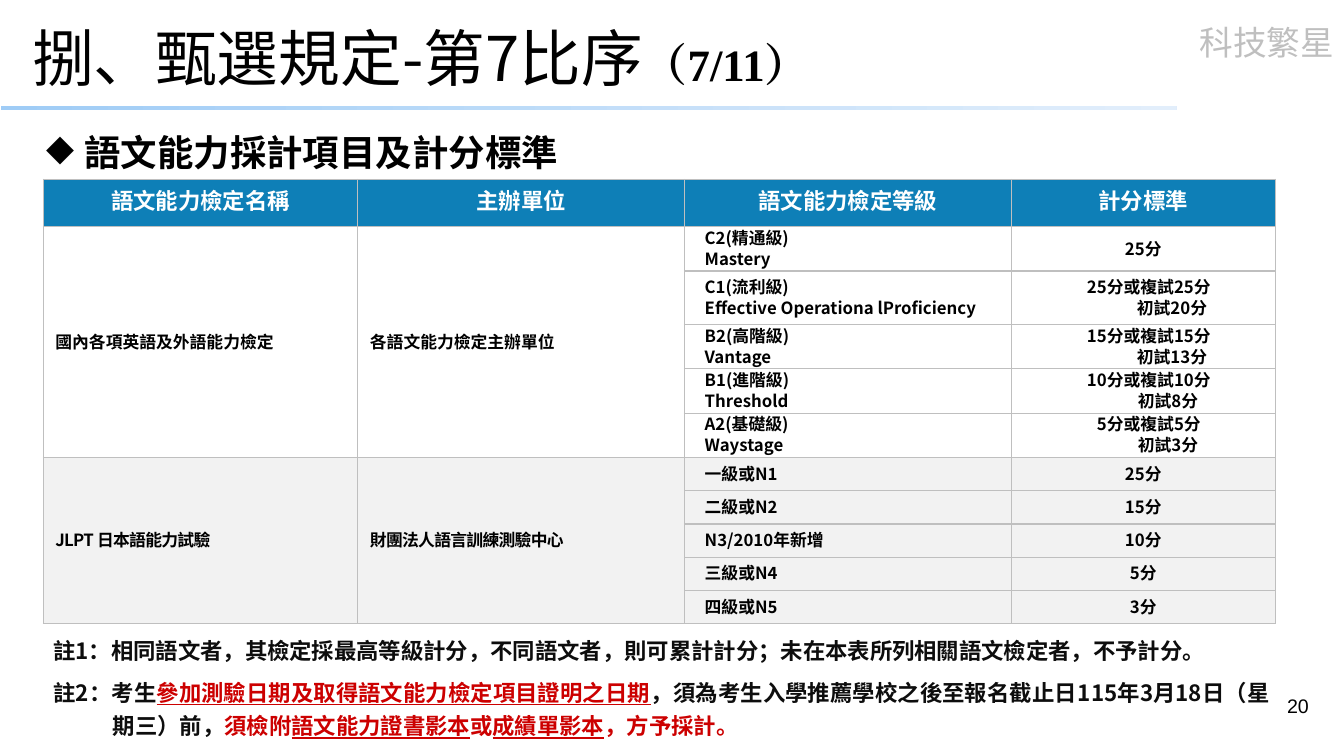
from lxml import etree
from pptx import Presentation
from pptx.dml.color import RGBColor
from pptx.enum.shapes import MSO_SHAPE
from pptx.enum.text import MSO_ANCHOR, PP_ALIGN
from pptx.oxml.ns import qn
from pptx.util import Inches, Pt

LEFT, CENTER, RIGHT, JUSTIFY = PP_ALIGN.LEFT, PP_ALIGN.CENTER, PP_ALIGN.RIGHT, PP_ALIGN.JUSTIFY
TOP, MIDDLE = MSO_ANCHOR.TOP, MSO_ANCHOR.MIDDLE
RECTANGLE = MSO_SHAPE.RECTANGLE

BLACK = RGBColor(0x00, 0x00, 0x00)
WHITE = RGBColor(0xFF, 0xFF, 0xFF)
INK = RGBColor(0x0D, 0x0D, 0x0D)
RED = RGBColor(0xCC, 0x00, 0x00)
GRAY = RGBColor(0xBF, 0xBF, 0xBF)
PALE_GRAY = RGBColor(0xF2, 0xF2, 0xF2)
HEADER_BLUE = RGBColor(0x0E, 0x7F, 0xB7)
BAR_START = RGBColor(0x9F, 0xCC, 0xF6)
BAR_END = RGBColor(0xE2, 0xEE, 0xFB)
SANS, SANS_JP = "Noto Sans CJK SC", "Noto Sans CJK JP"
SERIF, ARIAL = "Times New Roman", "Arial"

HEADERS = ["語文能力檢定名稱", "主辦單位", "語文能力檢定等級", "計分標準"]
# Each level: lines of the level cell, lines of the score cell, extra indent of the second score line
EXAMS = [
    {"name": "國內各項英語及外語能力檢定", "host": "各語文能力檢定主辦單位",
     "fill": WHITE, "spacing": 0,
     "levels": [
         (["C2(精通級)", "Mastery"], ["25分"], 0),
         (["C1(流利級)", "Effective Operationa lProficiency"], ["25分或複試25分", "初試20分"], 0.46),
         (["B2(高階級)", "Vantage"], ["15分或複試15分", "初試13分"], 0.46),
         (["B1(進階級)", "Threshold"], ["10分或複試10分", "初試8分"], 0.38),
         (["A2(基礎級)", "Waystage"], ["5分或複試5分", "初試3分"], 0.38),
     ]},
    {"name": "JLPT 日本語能力試驗", "host": "財團法人語言訓練測驗中心",
     "fill": PALE_GRAY, "spacing": -50,
     "levels": [
         (["一級或N1"], ["25分"], 0),
         (["二級或N2"], ["15分"], 0),
         (["N3/2010年新增"], ["10分"], 0),
         (["三級或N4"], ["5分"], 0),
         (["四級或N5"], ["3分"], 0),
     ]},
]
COLUMN_WIDTHS = [3.12, 3.24, 3.24, 2.62]
ROW_HEIGHTS = [0.47, 0.44, 0.53] + [0.44] * 3 + [0.33] * 5
SCORE_INDENT = 0.11

# Each note is a list of (text, colour, underlined)
NOTES = [
    [("註1：相同語文者，其檢定採最高等級計分，不同語文者，則可累計計分；未在本表所列相關語文檢定者，不予計分。", INK, False)],
    [("註2：考生", INK, False),
     ("參加測驗日期及取得語文能力檢定項目證明之日期", RED, True),
     ("，須為考生入學推薦學校之後至報名截止日115年3月18日（星期三）前，", INK, False),
     ("須檢附", RED, False),
     ("語文能力證書影本", RED, True),
     ("或", RED, False),
     ("成績單影本", RED, True),
     ("，方予採計。", RED, False)],
]


def add_span(para, text, size, color, face=SANS, bold=True, underline=False, spacing=0):
    span = para.add_run()
    span.text = text
    font = span.font
    font.size, font.bold, font.name = Pt(size), bold, face
    font.color.rgb = color
    if underline:
        font.underline = True
    properties = span._r.get_or_add_rPr()
    if spacing:
        properties.set("spc", str(spacing))
    east_asian = etree.Element(qn("a:ea"), typeface=face)
    properties.find(qn("a:latin")).addnext(east_asian)


def set_indent(para, left, first=0):
    properties = para._p.get_or_add_pPr()
    properties.set("marL", str(Inches(left)))
    properties.set("indent", str(Inches(first)))


def add_box(page, left, top, width, height, anchor=TOP):
    box = page.shapes.add_textbox(Inches(left), Inches(top), Inches(width), Inches(height))
    box.text_frame.word_wrap = True
    box.text_frame.vertical_anchor = anchor
    return box.text_frame


def next_paragraph(frame, index):
    return frame.add_paragraph() if index else frame.paragraphs[0]


def style_cell(cell, fill, left_margin):
    """Set the fill, margins and thin gray borders of a cell."""
    cell.fill.solid()
    cell.fill.fore_color.rgb = fill
    cell.vertical_anchor = MIDDLE
    cell.margin_left, cell.margin_right = Inches(left_margin), Inches(0.08)
    cell.margin_top, cell.margin_bottom = Inches(0.01), 0
    properties = cell._tc.get_or_add_tcPr()
    for position, side in enumerate(("lnL", "lnR", "lnT", "lnB")):
        border = etree.Element(qn(f"a:{side}"), w=str(Pt(1)))
        solid = etree.SubElement(border, qn("a:solidFill"))
        etree.SubElement(solid, qn("a:srgbClr"), val=str(GRAY))
        properties.insert(position, border)


def write_cell(cell, lines, size=12, color=BLACK, align=LEFT, leading=15, spacing=0, indents=()):
    for index, line in enumerate(lines):
        para = next_paragraph(cell.text_frame, index)
        para.alignment, para.line_spacing = align, Pt(leading)
        if indents:
            set_indent(para, indents[index])
        add_span(para, line, size, color, spacing=spacing)


def add_score_table(page):
    frame = page.shapes.add_table(len(ROW_HEIGHTS), len(COLUMN_WIDTHS), Inches(0.43), Inches(1.78),
                                  Inches(sum(COLUMN_WIDTHS)), Inches(sum(ROW_HEIGHTS)))
    table = frame.table
    for column, width in zip(table.columns, COLUMN_WIDTHS):
        column.width = Inches(width)
    for row, height in zip(table.rows, ROW_HEIGHTS):
        row.height = Inches(height)

    for column, header in enumerate(HEADERS):
        cell = table.cell(0, column)
        style_cell(cell, HEADER_BLUE, 0.08)
        write_cell(cell, [header], 16, WHITE, CENTER, 18)

    first_row = 1
    for exam in EXAMS:
        last_row = first_row + len(exam["levels"]) - 1
        for row, (level, score, shift) in enumerate(exam["levels"], first_row):
            for column, margin in enumerate((0.12, 0.12, 0.2, 0.08)):
                style_cell(table.cell(row, column), exam["fill"], margin)
            write_cell(table.cell(row, 2), level)
            indents = (SCORE_INDENT, SCORE_INDENT + shift) if shift else ()
            write_cell(table.cell(row, 3), score, align=CENTER, indents=indents)
        for column, key in enumerate(("name", "host")):
            cell = table.cell(first_row, column)
            cell.merge(table.cell(last_row, column))
            write_cell(cell, [exam[key]], spacing=exam["spacing"])
        first_row = last_row + 1


def add_heading(page):
    bar = page.shapes.add_shape(RECTANGLE, Inches(0.01), Inches(1.05), Inches(11.66), Inches(0.04))
    bar.shadow.inherit = False
    bar.line.fill.background()
    bar.fill.gradient()
    bar.fill.gradient_angle = 0
    for stop, color in zip(bar.fill.gradient_stops, (BAR_START, BAR_END)):
        stop.color.rgb = color

    label = add_box(page, 10.97, 0.17, 2.36, 0.5).paragraphs[0]
    label.alignment = RIGHT
    add_span(label, "科技繁星", 24, GRAY, SANS_JP, bold=False)

    title = add_box(page, 0.22, 0.22, 11.29, 0.69, MIDDLE).paragraphs[0]
    add_span(title, "捌、甄選規定-第7比序", 44, BLACK, SANS_JP, bold=False)
    add_span(title, "（7/11）", 32, BLACK, SERIF)

    number = add_box(page, 9.97, 6.83, 3.11, 0.52).paragraphs[0]
    number.alignment = RIGHT
    add_span(number, "20", 14, BLACK, ARIAL, bold=False)


def add_subtitle(page):
    para = add_box(page, 0.36, 1.24, 6.74, 0.54).paragraphs[0]
    set_indent(para, 0.38, -0.38)
    etree.SubElement(para._p.get_or_add_pPr(), qn("a:buChar"), char="◆")
    add_span(para, "語文能力採計項目及計分標準", 26, BLACK)


def add_notes(page):
    frame = add_box(page, 0.43, 6.2, 12.26, 1.16)
    for index, note in enumerate(NOTES):
        para = next_paragraph(frame, index)
        para.alignment, para.line_spacing, para.space_after = JUSTIFY, Pt(24), Pt(6)
        set_indent(para, 0.59, -0.59)
        for text, color, underline in note:
            add_span(para, text, 16, color, underline=underline)


def main():
    deck = Presentation()
    deck.slide_width, deck.slide_height = Inches(13.33), Inches(7.5)
    page = deck.slides.add_slide(deck.slide_layouts[6])
    add_heading(page)
    add_score_table(page)
    add_subtitle(page)
    add_notes(page)
    deck.save("out.pptx")


if __name__ == "__main__":
    main()
